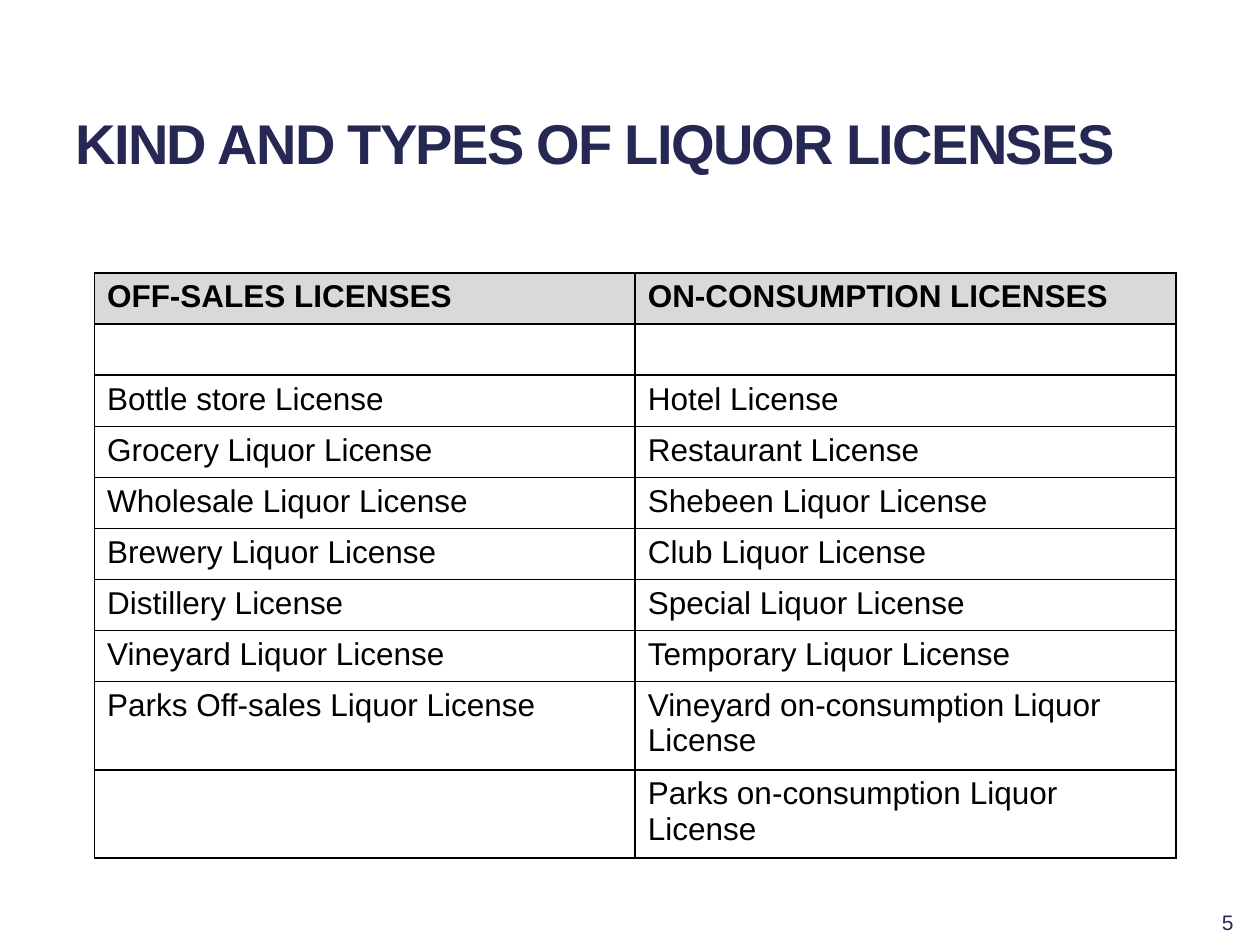
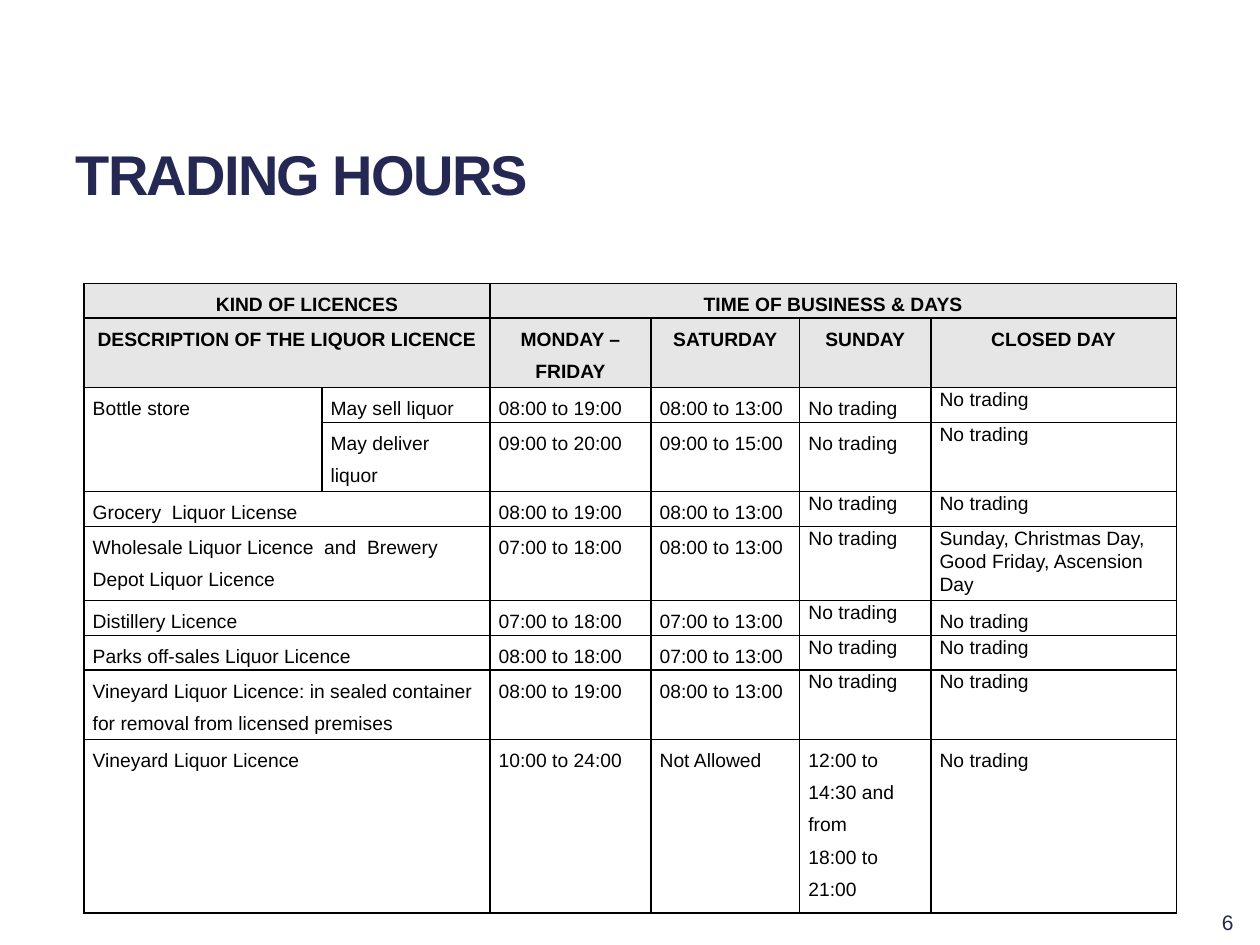
"""Build two slides on liquor licenses and trading hours."""
from lxml import etree
from pptx import Presentation
from pptx.dml.color import RGBColor
from pptx.enum.text import MSO_ANCHOR, MSO_AUTO_SIZE, PP_ALIGN
from pptx.oxml.ns import qn
from pptx.util import Pt

LEFT, MID, RIGHT = PP_ALIGN.LEFT, PP_ALIGN.CENTER, PP_ALIGN.RIGHT
CENTRE = MSO_ANCHOR.MIDDLE
NO_FIT = MSO_AUTO_SIZE.NONE
NAVY, BLACK = "242852", "000000"

KINDS = [
    ("OFF-SALES LICENSES", "ON-CONSUMPTION LICENSES"),
    ("", ""),
    ("Bottle store License", "Hotel License"),
    ("Grocery Liquor License", "Restaurant License"),
    ("Wholesale Liquor License", "Shebeen Liquor License"),
    ("Brewery Liquor License", "Club Liquor License"),
    ("Distillery License", "Special Liquor License"),
    ("Vineyard Liquor License", "Temporary Liquor License"),
    ("Parks Off-sales Liquor License", "Vineyard on-consumption Liquor License"),
    ("", "Parks on-consumption Liquor License"),
]

SHUT = "No trading"
HOURS = [
    ("KIND OF LICENCES", "", "TIME OF BUSINESS & DAYS", "", "", ""),
    ("DESCRIPTION OF THE LIQUOR LICENCE", "", "MONDAY – FRIDAY", "SATURDAY",
     "SUNDAY", "CLOSED DAY"),
    ("Bottle store", "May sell liquor", "08:00 to 19:00", "08:00 to 13:00",
     SHUT, SHUT),
    ("", "May deliver liquor", "09:00 to 20:00", "09:00 to 15:00", SHUT, SHUT),
    ("Grocery  Liquor License", "", "08:00 to 19:00", "08:00 to 13:00",
     SHUT, SHUT),
    ("Wholesale Liquor Licence  and  Brewery  Depot Liquor Licence", "",
     "07:00 to 18:00", "08:00 to 13:00", SHUT,
     "Sunday, Christmas Day, Good Friday, Ascension Day"),
    ("Distillery Licence", "", "07:00 to 18:00", "07:00 to 13:00", SHUT, SHUT),
    ("Parks off-sales Liquor Licence", "", "08:00 to 18:00", "07:00 to 13:00",
     SHUT, SHUT),
    ("Vineyard Liquor Licence: in sealed container for removal from licensed "
     "premises", "", "08:00 to 19:00", "08:00 to 13:00", SHUT, SHUT),
    ("Vineyard Liquor Licence", "", "10:00 to 24:00", "Not Allowed",
     "12:00 to 14:30 and from\n18:00 to 21:00", SHUT),
]
WIDE = [(row, 0, row, 1) for row in (0, 1, *range(4, 10))]
SPANS = WIDE + [(0, 2, 0, 5), (2, 0, 3, 0)]
TIGHT = {(row, 4) for row in range(4, 9)} | {(row, 5) for row in (2, 3, 4, 5, 7, 8)}


def paint(text):
    return RGBColor.from_string(text)


class Deck:
    def __init__(self):
        self.show = Presentation()
        self.show.slide_width, self.show.slide_height = Pt(720), Pt(540)
        self.slide = None

    def style(self, para, size, color, bold=False, align=LEFT):
        para.alignment = align
        font = para.font
        font.name, font.size, font.bold = "Arial", Pt(size), bold
        font.color.rgb = paint(color)

    def start(self, title, top, number):
        self.slide = self.show.slides.add_slide(self.show.slide_layouts[5])
        head = self.slide.shapes.title
        head.left, head.top, head.width, head.height = Pt(36), Pt(top), Pt(648), Pt(78)
        frame = head.text_frame
        frame.text = title
        frame.auto_size, frame.vertical_anchor = NO_FIT, CENTRE
        para = frame.paragraphs[0]
        self.style(para, 32, NAVY, True)
        para.runs[0].font._element.set("spc", "-100")
        self.page(number)

    def page(self, number):
        box = self.slide.shapes.add_textbox(Pt(628), Pt(514), Pt(84), Pt(26))
        frame = box.text_frame
        frame.word_wrap, frame.vertical_anchor = True, CENTRE
        frame.text = str(number)
        self.style(frame.paragraphs[0], 12, NAVY, align=RIGHT)

    def edge(self, cell):
        props = cell._tc.get_or_add_tcPr()
        for side in ("lnL", "lnR", "lnT", "lnB"):
            line = etree.SubElement(props, qn(f"a:{side}"), w=str(Pt(1)))
            fill = etree.SubElement(line, qn("a:solidFill"))
            etree.SubElement(fill, qn("a:srgbClr"), val=BLACK)

    def cell(self, cell, text, size, shade, align):
        cell.text = text
        self.edge(cell)
        if shade:
            cell.fill.solid()
            cell.fill.fore_color.rgb = paint(shade)
        else:
            cell.fill.background()
        for para in cell.text_frame.paragraphs:
            self.style(para, size, BLACK, bool(shade), align)

    def table(self, left, top, cols, rows, data, size, shade, heads=1, align=LEFT):
        frame = self.slide.shapes.add_table(
            len(rows), len(cols), Pt(left), Pt(top), Pt(sum(cols)), Pt(sum(rows)))
        grid = frame.table
        grid.first_row = grid.horz_banding = False
        for col, width in zip(grid.columns, cols):
            col.width = Pt(width)
        for row, height in zip(grid.rows, rows):
            row.height = Pt(height)
        for r, line in enumerate(data):
            for c, text in enumerate(line):
                top_row = r < heads
                self.cell(grid.cell(r, c), text, size, shade if top_row else None,
                          align if top_row else LEFT)
        return grid

    def space(self, grid, tight):
        for r, row in enumerate(grid.rows):
            for c, cell in enumerate(row.cells):
                cell.margin_left = cell.margin_right = Pt(5)
                cell.margin_top = cell.margin_bottom = 0
                for para in cell.text_frame.paragraphs:
                    para.line_spacing = 1.07 if (r, c) in tight else 1.5

    def merge(self, grid, spans):
        for r, c, end, last in spans:
            grid.cell(r, c).merge(grid.cell(end, last))


def main():
    deck = Deck()
    deck.start("KIND AND TYPES OF LIQUOR LICENSES", 42, 5)
    deck.table(54, 156, [309] * 2, [29.2] * 10, KINDS, 18, "D9D9D9")

    deck.start("TRADING HOURS", 60, 6)
    one, two = 19.4, 38.8
    rows = [one, two, one, two, one, 41.8, one, one, two, 97.2]
    grid = deck.table(48, 162, [136, 96, 92, 85, 75, 140.4], rows, HOURS, 11,
                      "E7E6E6", heads=2, align=MID)
    deck.space(grid, TIGHT)
    deck.merge(grid, SPANS)
    first = grid.cell(0, 0).text_frame.paragraphs[0]
    first._p.get_or_add_pPr().set("marL", str(Pt(23)))
    deck.show.save("out.pptx")


if __name__ == "__main__":
    main()
